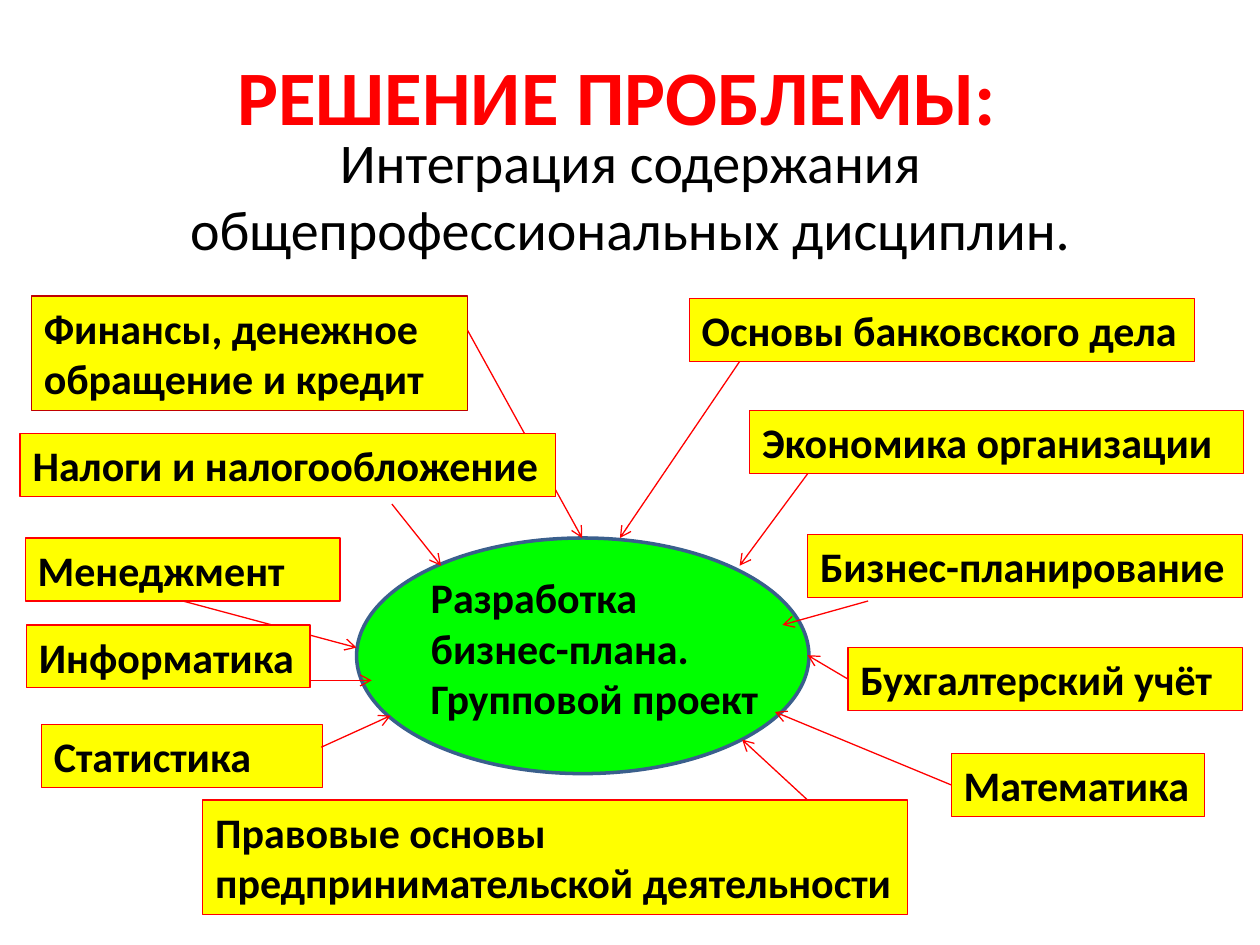
from lxml import etree
from pptx import Presentation
from pptx.dml.color import RGBColor
from pptx.enum.shapes import MSO_CONNECTOR, MSO_SHAPE
from pptx.enum.text import MSO_ANCHOR, MSO_AUTO_SIZE, PP_ALIGN
from pptx.oxml.ns import qn
from pptx.util import Inches, Pt

COLORS = {"red": "FF0000", "dark": "C00000", "yellow": "FFFF00",
          "green": "00FF00", "blue": "3A5F8C", "black": "000000"}


def color(name):
    return RGBColor.from_string(COLORS[name])


def write(shape, lines, size, name="black", bold=True, align=PP_ALIGN.LEFT):
    frame = shape.text_frame
    frame.word_wrap = True
    for i, line in enumerate(lines):
        para = frame.paragraphs[0] if i == 0 else frame.add_paragraph()
        para.alignment = align
        run = para.add_run()
        run.text = line
        run.font.name = "Calibri"
        run.font.size = Pt(size)
        run.font.bold = bold
        run.font.color.rgb = color(name)
    return frame


prs = Presentation()
prs.slide_width, prs.slide_height = Inches(10), Inches(7.5)
slide = prs.slides.add_slide(prs.slide_layouts[6])
shapes = slide.shapes

# Title and subtitle
title = shapes.add_textbox(Inches(0.4), Inches(0.13), Inches(9), Inches(1.25))
frame = write(title, ["РЕШЕНИЕ ПРОБЛЕМЫ:"], 44, "red", align=PP_ALIGN.CENTER)
frame.vertical_anchor = MSO_ANCHOR.MIDDLE
goal = shapes.add_textbox(Inches(0.45), Inches(0.96), Inches(9.11), Inches(1.25))
write(goal, ["Интеграция содержания общепрофессиональных дисциплин."], 32,
      bold=False, align=PP_ALIGN.CENTER)

# Central project
hub = shapes.add_shape(MSO_SHAPE.OVAL, Inches(2.83), Inches(4.27),
                       Inches(3.59), Inches(1.87))
hub.shadow.inherit = False
hub.fill.solid()
hub.fill.fore_color.rgb = color("green")
hub.line.color.rgb = color("blue")
hub.line.width = Pt(2)
label = shapes.add_textbox(Inches(3.32), Inches(4.49), Inches(2.89), Inches(1.31))
write(label, ["Разработка бизнес-плана.", "Групповой проект"], 24)

# Subjects: lines, left, top, width, wrap, arrow start, arrow end, joined side
subjects = [
    (["Финансы, денежное обращение и кредит"], 0.25, 2.35, 3.46, True,
     (3.71, 2.62), (4.62, 4.27), None),
    (["Налоги и налогообложение"], 0.16, 3.44, 4.25, False,
     (3.11, 4), (3.5, 4.49), None),
    (["Менеджмент"], 0.2, 4.27, 2.5, True, (1.45, 4.77), (2.83, 5.14), 2),
    (["Информатика"], 0.21, 4.96, 2.25, False, (2.46, 5.4), (2.95, 5.4), None),
    (["Статистика"], 0.33, 5.75, 2.23, True, (2.55, 5.93), (3.1, 5.68), None),
    (["Правовые основы", "предпринимательской деятельности"], 1.61, 6.35, 5.59,
     True, (6.41, 6.35), (5.89, 5.87), None),
    (["Основы банковского дела"], 5.47, 2.37, 4.01, False,
     (5.87, 2.87), (4.92, 4.27), None),
    (["Экономика организации"], 5.95, 3.26, 3.92, True,
     (6.41, 3.76), (5.87, 4.49), None),
    (["Бизнес-планирование"], 6.41, 4.24, 3.45, False,
     (6.89, 4.77), (6.21, 4.96), None),
    (["Бухгалтерский учёт"], 6.73, 5.14, 3.13, True,
     (6.73, 5.4), (6.41, 5.2), 1),
    (["Математика"], 7.55, 5.98, 2.01, False, (7.55, 6.24), (6.15, 5.65), 1),
]
for lines, left, top, width, wrap, start, end, side in subjects:
    # Box
    first = lines[0].startswith("Финансы")
    tall = first or len(lines) > 1
    box = shapes.add_shape(MSO_SHAPE.RECTANGLE, Inches(left), Inches(top),
                           Inches(width), Inches(0.91 if tall else 0.5))
    box.shadow.inherit = False
    box.fill.solid()
    box.fill.fore_color.rgb = color("yellow")
    box.line.color.rgb = color("dark" if first else "red")
    box.line.width = Pt(0.75)
    frame = write(box, lines, 24)
    frame.word_wrap = wrap
    frame.auto_size = MSO_AUTO_SIZE.SHAPE_TO_FIT_TEXT
    frame.vertical_anchor = MSO_ANCHOR.TOP

    # Arrow to the project
    arrow = shapes.add_connector(MSO_CONNECTOR.STRAIGHT,
                                 *map(Inches, start + end))
    if side is not None:
        arrow.begin_connect(box, side)
    arrow.line.color.rgb = color("red")
    arrow.line.width = Pt(0.75)
    etree.SubElement(arrow.line._get_or_add_ln(), qn("a:tailEnd"), type="arrow")
    etree.SubElement(arrow._element.spPr, qn("a:effectLst"))

prs.save("out.pptx")
